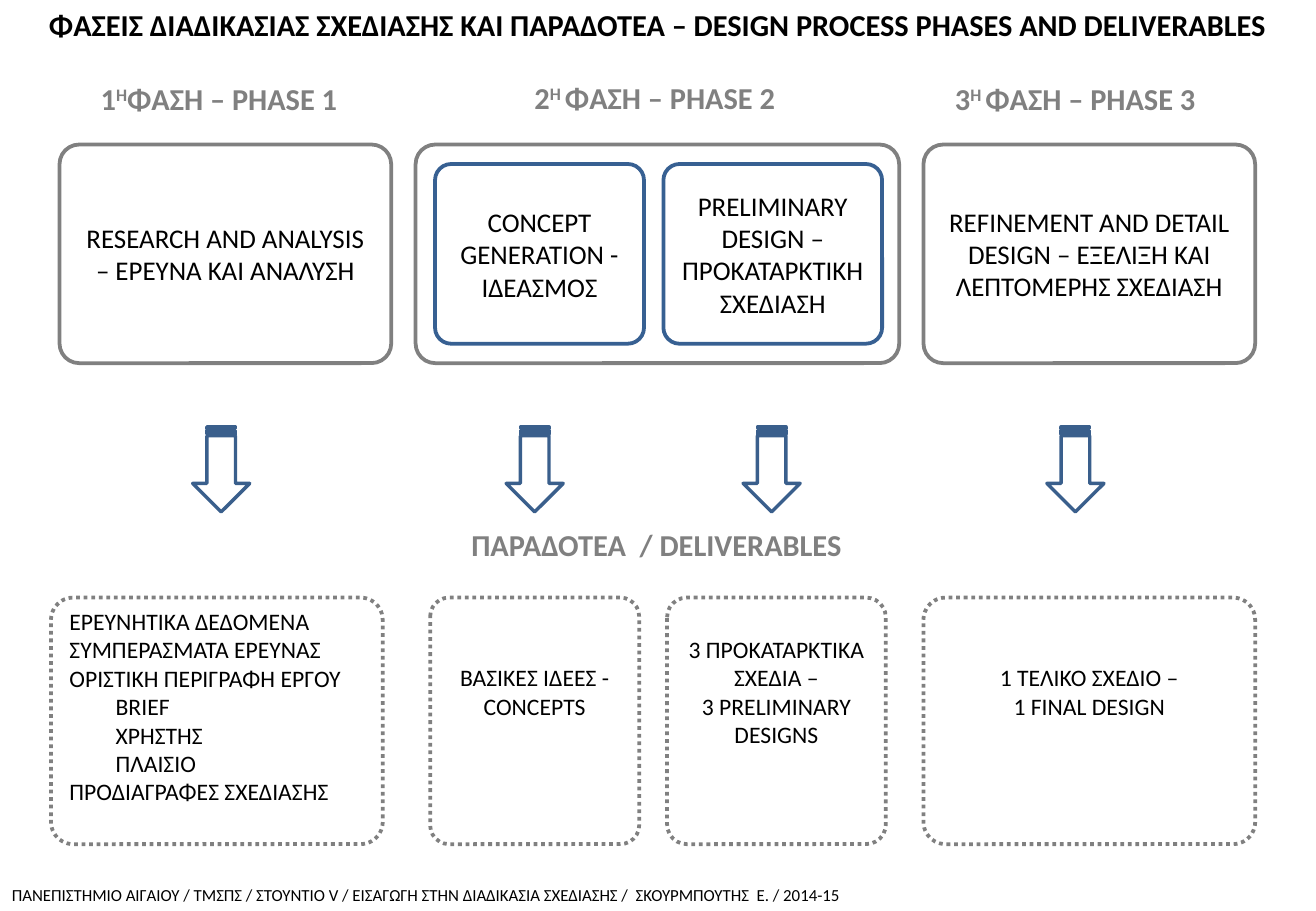
from pptx import Presentation, util as u
from pptx.dml.color import RGBColor
from pptx.enum import dml, shapes, text

HUE = {"ink": "000000", "gray": "808080", "blue": "376092", "arrow": "3A5F8C"}
KIND = shapes.MSO_SHAPE
MID, LEFT = text.PP_ALIGN.CENTER, text.PP_ALIGN.LEFT

deck = Presentation()
deck.slide_width, deck.slide_height = u.Inches(10.83), u.Inches(7.5)
slide = deck.slides.add_slide(deck.slide_layouts[6])


def write(shape, words, size, hue="ink", bold=False, align=LEFT):
    frame = shape.text_frame
    frame.text = words
    for para in frame.paragraphs:
        para.alignment = align
        for run in para.runs:
            run.font.name, run.font.size, run.font.bold = "Calibri", u.Pt(size), bold
            run.font.color.rgb = RGBColor.from_string(HUE[hue])
    return frame


def draw(kind, at, hue, weight=2.25):
    shape = slide.shapes.add_shape(kind, *map(u.Inches, at))
    shape.shadow.inherit = False
    shape.fill.background()
    shape.line.color.rgb = RGBColor.from_string(HUE[hue])
    shape.line.width = u.Pt(weight)
    if kind == KIND.ROUNDED_RECTANGLE:
        shape.adjustments[0] = 0.09
    return shape


# Labels: left, top, width, height, words, size, colour, bold, alignment
labels = [
    (0, 7.23, 7.13, 0.27, "ΠΑΝΕΠΙΣΤΗΜΙΟ ΑΙΓΑΙΟΥ / ΤΜΣΠΣ / ΣΤΟΥΝΤΙΟ V / ΕΙΣΑΓΩΓΗ ΣΤΗΝ "
     "ΔΙΑΔΙΚΑΣΙΑ ΣΧΕΔΙΑΣΗΣ /  ΣΚΟΥΡΜΠΟΥΤΗΣ  Ε. / 2014-15", 10, "ink", False, LEFT),
    (0, 0, 10.83, 0.4, "ΦΑΣΕΙΣ ΔΙΑΔΙΚΑΣΙΑΣ ΣΧΕΔΙΑΣΗΣ ΚΑΙ ΠΑΡΑΔΟΤΕΑ – DESIGN PROCESS "
     "PHASES AND DELIVERABLES", 18, "ink", True, MID),
    (3.78, 4.28, 3.28, 0.4, "ΠΑΡΑΔΟΤΕΑ  / DELIVERABLES", 18, "gray", True, LEFT),
]
for *at, words, size, hue, bold, align in labels:
    label = slide.shapes.add_textbox(*map(u.Inches, at))
    write(label, words, size, hue, bold, align).word_wrap = align == MID

# Phase headings with a raised ordinal ending
heads = [(0.73, 0.61, 2.19, "1", "Η", "ΦΑΣΗ – PHASE 1"),
         (4.3, 0.6, 2.22, "2", "Η ", "ΦΑΣΗ – PHASE 2"),
         (7.76, 0.61, 2.22, "3", "Η ", "ΦΑΣΗ – PHASE 3")]
for left, top, width, *parts in heads:
    head = slide.shapes.add_textbox(*map(u.Inches, (left, top, width, 0.4)))
    head.text_frame.word_wrap = False
    para = head.text_frame.paragraphs[0]
    for part in parts:
        run = para.add_run()
        run.text = part
        run.font.name, run.font.size, run.font.bold = "Calibri", u.Pt(18), True
        run.font.color.rgb = RGBColor.from_string(HUE["gray"])
    para.runs[1].font._element.set("baseline", "30000")

# Phase boxes: the second phase is a frame around two steps
BOX = KIND.ROUNDED_RECTANGLE
TOP, TALL = 1.19, 1.8
draw(BOX, (3.42, TOP, 3.98, TALL), "gray")
phases = [
    (0.49, 2.73, 0, "gray", "RESEARCH AND ANALYSIS – ΕΡΕΥΝΑ ΚΑΙ ΑΝΑΛΥΣΗ"),
    (3.58, 1.72, 0.16, "blue", "CONCEPT GENERATION - ΙΔΕΑΣΜΟΣ"),
    (5.46, 1.8, 0.16, "blue", "PRELIMINARY DESIGN – ΠΡΟΚΑΤΑΡΚΤΙΚΗ ΣΧΕΔΙΑΣΗ"),
    (7.6, 2.73, 0, "gray",
     "REFINEMENT AND DETAIL DESIGN – ΕΞΕΛΙΞΗ ΚΑΙ ΛΕΠΤΟΜΕΡΗΣ ΣΧΕΔΙΑΣΗ"),
]
for left, width, inset, hue, words in phases:
    box = draw(BOX, (left, TOP + inset, width, TALL - 2 * inset), hue)
    write(box, words, 16, align=MID).vertical_anchor = text.MSO_ANCHOR.MIDDLE

for left in (1.47, 4.05, 6, 8.5):
    arrow = draw(KIND.STRIPED_RIGHT_ARROW, (left, 3.63, 0.7, 0.47), "arrow", 2)
    arrow.rotation = 90

# Deliverables: left, width, lines of room kept below the text, alignment, words
LINE = 0.24
SUBS = ("BRIEF", "ΧΡΗΣΤΗΣ", "ΠΛΑΙΣΙΟ")
goods = [
    (0.42, 2.73, 1, LEFT, "\n".join((
        "ΕΡΕΥΝΗΤΙΚΑ ΔΕΔΟΜΕΝΑ", "ΣΥΜΠΕΡΑΣΜΑΤΑ ΕΡΕΥΝΑΣ", "ΟΡΙΣΤΙΚΗ ΠΕΡΙΓΡΑΦΗ ΕΡΓΟΥ",
        *SUBS, "ΠΡΟΔΙΑΓΡΑΦΕΣ ΣΧΕΔΙΑΣΗΣ"))),
    (3.54, 1.72, 2, MID, "ΒΑΣΙΚΕΣ ΙΔΕΕΣ - CONCEPTS"),
    (5.49, 1.8, 2, MID, "3 ΠΡΟΚΑΤΑΡΚΤΙΚΑ ΣΧΕΔΙΑ –\n3 PRELIMINARY DESIGNS"),
    (7.6, 2.73, 2, MID, "1 ΤΕΛΙΚΟ ΣΧΕΔΙΟ –\n1 FINAL DESIGN"),
]
for left, width, room, align, words in goods:
    box = draw(BOX, (left, 4.92, width, 2.03), "gray")
    box.line.dash_style = dml.MSO_LINE.ROUND_DOT
    frame = write(box, words, 14, align=align)
    frame.vertical_anchor = text.MSO_ANCHOR.MIDDLE
    frame.margin_bottom = u.Inches(0.05 + room * LINE)
    for para in frame.paragraphs:
        if para.text in SUBS:
            para._p.get_or_add_pPr().set("marL", str(u.Inches(0.38)))

deck.save("out.pptx")
